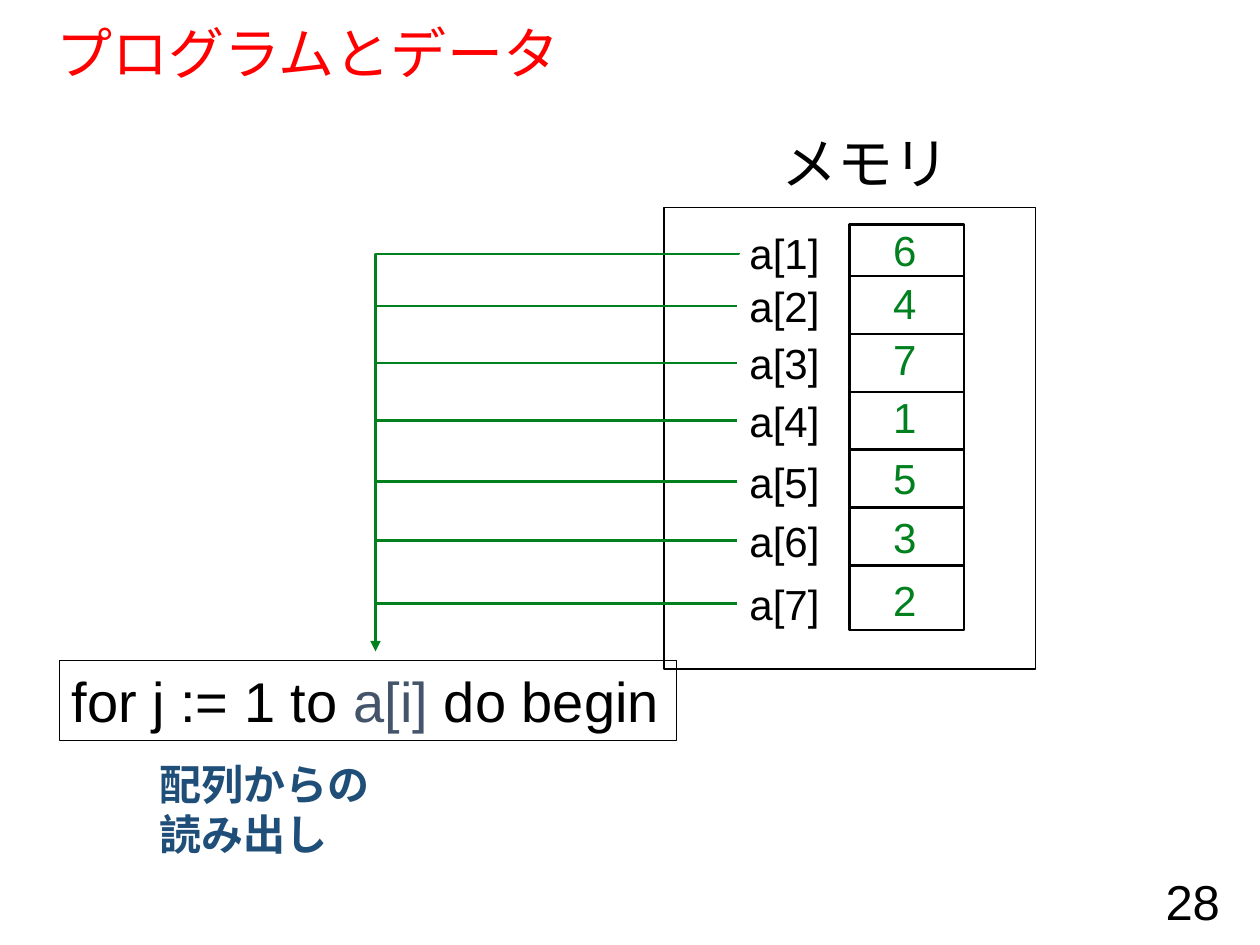
from lxml.etree import SubElement
from pptx import Presentation
from pptx.dml.color import RGBColor
from pptx.enum.shapes import MSO_CONNECTOR as CONN, MSO_SHAPE as SHAPE
from pptx.enum.text import MSO_ANCHOR as ANCHOR, PP_ALIGN as ALIGN
from pptx.oxml.ns import qn
from pptx.util import Inches, Pt

COLORS = {
    "title": "FF0000",
    "ink": "000000",
    "data": "00801E",
    "index": "44546A",
    "note": "1F4E79",
}
FONT = "Arial"
COLS, ROWS = 100, 75  # grid over the slide, square cells
CELL = Inches(10) / COLS

VALUES = [6, 4, 7, 1, 5, 3, 2]
WIRE_ROWS = [20.1, 24.3, 28.8, 33.4, 38.2, 42.9, 47.9]
BUS_COL, WIRE_END = 29.8, 58.5
CELL_LEFT, CELL_RIGHT = 67.4, 76.5
FIRST_DIVIDER, DIVIDER_STEP = 21.9, 4.6


def grid(*cells):
    return [round(c * CELL) for c in cells]


def rgb(name):
    return RGBColor.from_string(COLORS[name])


def write(sp, lines, size, bold=False, wrap=False, anchor=ANCHOR.TOP,
          align=ALIGN.LEFT, spacing=None):
    """Fill a shape with lines, each a list of (text, colour) runs."""
    tf = sp.text_frame
    tf.word_wrap = wrap
    tf.vertical_anchor = anchor
    for i, runs in enumerate(lines):
        p = tf.add_paragraph() if i else tf.paragraphs[0]
        p.alignment = align
        if spacing:
            p.line_spacing = spacing
        for text, color in runs:
            r = p.add_run()
            r.text = text
            r.font.name = FONT
            r.font.size = Pt(size)
            r.font.bold = bold
            r.font.color.rgb = rgb(color)


def add_text(s, at, lines, size, **style):
    write(s.shapes.add_textbox(*grid(*at)), lines, size, **style)


def add_frame(s, at, width):
    sp = s.shapes.add_shape(SHAPE.RECTANGLE, *grid(*at))
    sp.shadow.inherit = False
    sp.fill.background()
    sp.line.color.rgb = rgb("ink")
    sp.line.width = Pt(width)
    return sp


def add_line(s, start, end, color, kind=CONN.STRAIGHT):
    line = s.shapes.add_connector(kind, *grid(*start, *end))
    line.line.color.rgb = rgb(color)
    line.line.width = Pt(1.5)
    SubElement(line._element.spPr, qn("a:effectLst"))
    return line


def add_bus(s, start, end):
    """Elbow arrow that runs left from start, then down to end."""
    (x1, y1), (x2, y2) = start, end
    mid_x, mid_y = (x1 + x2) / 2, (y1 + y2) / 2
    half_w, half_h = (y2 - y1) / 2, (x1 - x2) / 2  # sides swap when turned
    bus = add_line(s, (mid_x - half_w, mid_y - half_h),
                   (mid_x + half_w, mid_y + half_h), "data", CONN.ELBOW)
    pr = bus._element.spPr
    pr.find(qn("a:xfrm")).set("rot", str(90 * 60000))
    geom = pr.find(qn("a:prstGeom"))
    guides = geom.find(qn("a:avLst"))
    if guides is None:
        guides = SubElement(geom, qn("a:avLst"))
    SubElement(guides, qn("a:gd"), name="adj1", fmla="val 200")
    SubElement(pr.find(qn("a:ln")), qn("a:tailEnd"), type="triangle")


def add_memory(s):
    # Outer frame, column of cells and the dividers between them
    add_text(s, (61, 9.7, 15.5, 6.4), [[("メモリ", "ink")]], 32)
    add_frame(s, (52.7, 16.5, 29.5, 36.6), 0.75)
    add_frame(s, (CELL_LEFT, 17.8, CELL_RIGHT - CELL_LEFT, 32.2), 1.5)
    for i in range(len(VALUES) - 1):
        y = FIRST_DIVIDER + i * DIVIDER_STEP
        add_line(s, (CELL_LEFT, y), (CELL_RIGHT, y), "ink")
    # Element names and their values
    for i, (value, y) in enumerate(zip(VALUES, WIRE_ROWS), 1):
        add_text(s, (58.5, y - 2.5, 7.6, 5.1), [[(f"a[{i}]", "ink")]], 24)
        add_text(s, (69.9, y - 2.8, 3.9, 5.1), [[(str(value), "data")]], 24)


def add_wires(s):
    add_bus(s, (58.6, WIRE_ROWS[0]), (BUS_COL, 51.7))
    for y in WIRE_ROWS[1:]:
        add_line(s, (WIRE_END, y), (BUS_COL, y), "data")


def main():
    prs = Presentation()
    prs.slide_width, prs.slide_height = grid(COLS, ROWS)
    s = prs.slides.add_slide(prs.slide_layouts[6])

    # Title and page number
    add_text(s, (3.5, 1.9, 92.5, 5.1), [[("プログラムとデータ", "title")]], 32,
             wrap=True, anchor=ANCHOR.MIDDLE, spacing=0.9)
    add_text(s, (75.3, 69.5, 22.5, 4), [[("28", "ink")]], 28,
             wrap=True, anchor=ANCHOR.MIDDLE, align=ALIGN.RIGHT)

    add_memory(s)
    add_wires(s)

    # Loop statement and its note, the note box wide enough for one line each
    code = add_frame(s, (4.7, 52.4, 49, 6.4), 0.75)
    write(code, [[("for j := 1 to ", "ink"), ("a[i]", "index"),
                  (" do begin", "ink")]], 32)
    add_text(s, (11.7, 59.7, 20, 8.9),
             [[("配列からの", "note")], [("読み出し", "note")]], 24,
             bold=True, wrap=True)

    prs.save("out.pptx")


if __name__ == "__main__":
    main()
